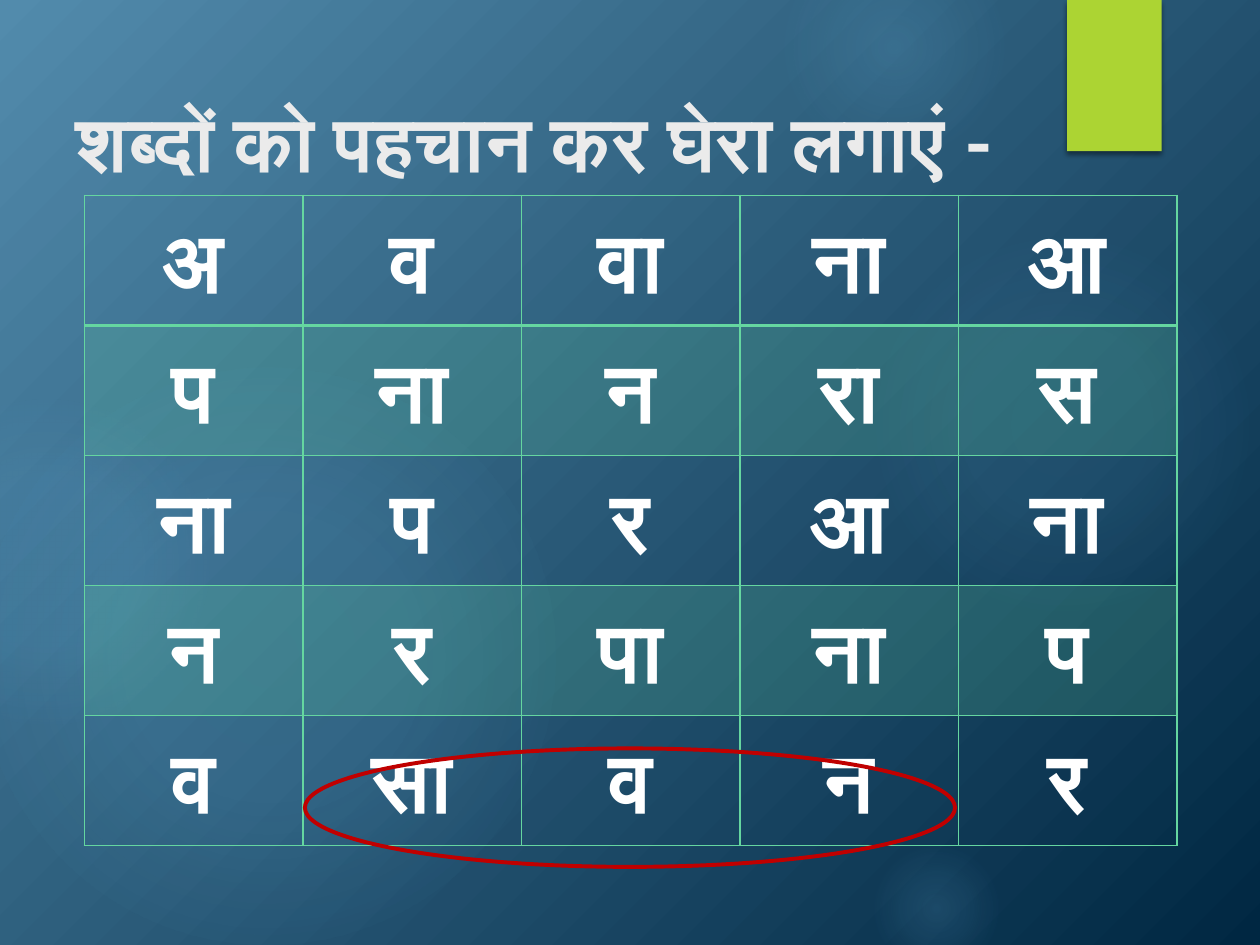
"""Build a Hindi word-search slide with one word circled."""
from dataclasses import dataclass

from lxml.etree import SubElement
from pptx import Presentation
from pptx.dml.color import RGBColor as RGB
from pptx.enum.shapes import MSO_SHAPE as SHAPE
from pptx.enum.text import MSO_ANCHOR as ANCHOR, PP_ALIGN as ALIGN
from pptx.oxml import parse_xml
from pptx.oxml.ns import nsdecls, qn
from pptx.util import Inches, Pt


@dataclass(frozen=True)
class Theme:
    font: str = "Lato"
    title_size: int = 44
    cell_size: int = 48
    title: str = "EBEBEB"
    text: str = "FFFFFF"
    sky: str = "528BAC"
    night: str = "002742"
    glow: str = "78C4F1"
    accent: str = "ACD433"
    grid: str = "65D6A0"
    ring: str = "C00000"


THEME = Theme()
TITLE = "शब्दों को पहचान कर घेरा लगाएं -"
LETTERS = [row.split() for row in (
    "अ व वा ना आ",
    "प ना न रा स",
    "ना प र आ ना",
    "न र पा ना प",
    "व सा व न र",
)]
GLOWS = [
    (6.89, 1.83, 3.08, ((0, 7), (36, 6), (69, 0), (100, 0))),
    (6.22, -0.5, 1.75, ((0, 14), (36, 7), (73, 0), (100, 0))),
    (6.89, 6.67, 1.08, ((0, 14), (36, 7), (66, 0), (100, 0))),
    (-0.17, 2.92, 4.58, ((0, 11), (36, 10), (75, 0), (100, 0))),
    (-0.92, 3.17, 2.58, ((0, 8), (36, 8), (72, 0), (100, 0))),
]


def color(hex_value):
    return RGB.from_string(hex_value)


def add_run(p, text, size, hex_value):
    r = p.add_run()
    r.text = text
    r.font.name = THEME.font
    r.font.size = Pt(size)
    r.font.bold = True
    r.font.color.rgb = color(hex_value)
    SubElement(r.font._element, qn("a:cs"), typeface=THEME.font)


def set_background(s):
    fill = s.background.fill
    fill.gradient()
    fill.gradient_angle = 315
    for stop, hex_value in zip(fill.gradient_stops, (THEME.sky, THEME.night)):
        stop.color.rgb = color(hex_value)


def add_shape(s, kind, left, top, width, height):
    sp = s.shapes.add_shape(kind, Inches(left), Inches(top), Inches(width), Inches(height))
    sp.shadow.inherit = False
    sp.fill.background()
    sp.line.fill.background()
    return sp


def add_glow(s, left, top, size, stops):
    sp = add_shape(s, SHAPE.OVAL, left, top, size, size)
    marks = "".join(
        f'<a:gs pos="{pos * 1000}"><a:srgbClr val="{THEME.glow}">'
        f'<a:alpha val="{alpha * 1000}"/></a:srgbClr></a:gs>' for pos, alpha in stops)
    gradient = parse_xml(
        f'<a:gradFill {nsdecls("a")} rotWithShape="1"><a:gsLst>{marks}</a:gsLst>'
        '<a:path path="circle"><a:fillToRect l="50000" t="50000" r="50000" b="50000"/>'
        '</a:path></a:gradFill>')
    spPr = sp._element.spPr
    spPr.replace(spPr.find(qn("a:noFill")), gradient)


def add_tab(s):
    sp = add_shape(s, SHAPE.RECTANGLE, 8.47, 0, 0.75, 1.2)
    sp.fill.solid()
    sp.fill.fore_color.rgb = color(THEME.accent)
    effects = sp._element.spPr.find(qn("a:effectLst"))
    effects.append(parse_xml(
        f'<a:outerShdw {nsdecls("a")} blurRad="{Pt(3)}" dist="{Pt(2)}" dir="5400000" '
        'rotWithShape="0"><a:srgbClr val="000000"><a:alpha val="45000"/></a:srgbClr>'
        '</a:outerShdw>'))


def set_title(s):
    title = s.shapes.title
    title.left, title.top, title.width, title.height = map(Inches, (0.5, 0.7, 9, 1.17))
    s.shapes._spTree.append(title._element)
    tf = title.text_frame
    tf.word_wrap = True
    tf.vertical_anchor = ANCHOR.TOP
    p = tf.paragraphs[0]
    p.alignment = ALIGN.LEFT
    add_run(p, TITLE, THEME.title_size, THEME.title)


def style_cell(cell, row):
    tcPr = cell._tc.get_or_add_tcPr()
    widths = {"L": 1, "R": 1, "T": 2 if row == 1 else 1, "B": 2 if row == 0 else 1}
    for side, width in widths.items():
        tcPr.append(parse_xml(
            f'<a:ln{side} {nsdecls("a")} w="{Pt(width)}"><a:solidFill>'
            f'<a:srgbClr val="{THEME.grid}"/></a:solidFill></a:ln{side}>'))
    if row % 2:
        cell.fill.solid()
        cell.fill.fore_color.rgb = color(THEME.grid)
        SubElement(tcPr.find(qn("a:solidFill"))[0], qn("a:alpha"), val="20000")
    else:
        cell.fill.background()


def add_letter_grid(s):
    rows, cols = len(LETTERS), len(LETTERS[0])
    frame = s.shapes.add_table(
        rows, cols, Inches(0.67), Inches(1.55), Inches(1.734 * cols), Inches(1.032 * rows))
    table = frame.table
    table.first_row = table.horz_banding = False
    for i, row in enumerate(LETTERS):
        for j, letter in enumerate(row):
            cell = table.cell(i, j)
            cell.vertical_anchor = ANCHOR.MIDDLE
            p = cell.text_frame.paragraphs[0]
            p.alignment = ALIGN.CENTER
            add_run(p, letter, THEME.cell_size, THEME.text)
            style_cell(cell, i)


def add_word_ring(s):
    sp = add_shape(s, SHAPE.OVAL, 2.42, 5.94, 5.16, 0.94)
    sp.line.color.rgb = color(THEME.ring)
    sp.line.width = Pt(2.25)


def main():
    prs = Presentation()
    prs.slide_width, prs.slide_height = Inches(10), Inches(7.5)
    s = prs.slides.add_slide(prs.slide_layouts[5])
    set_background(s)
    for glow in GLOWS:
        add_glow(s, *glow)
    add_tab(s)
    set_title(s)
    add_letter_grid(s)
    add_word_ring(s)
    prs.save("out.pptx")


if __name__ == "__main__":
    main()
